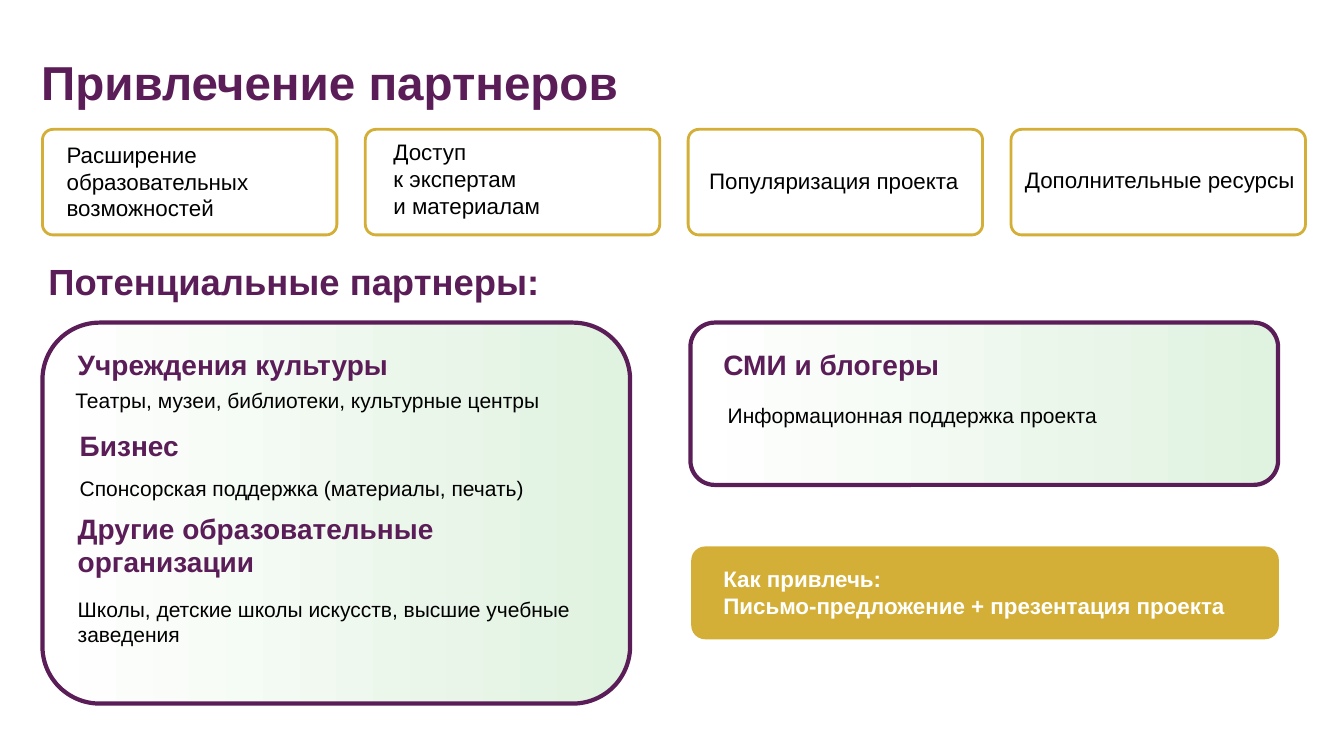
import pptx
import pptx.dml.color
import pptx.enum.shapes
import pptx.enum.text
import pptx.util

Cm = pptx.util.Cm
PLUM = pptx.dml.color.RGBColor(0x5B, 0x1D, 0x57)
GOLD = pptx.dml.color.RGBColor(0xD4, 0xAF, 0x37)
MINT = pptx.dml.color.RGBColor(0xE0, 0xF2, 0xE0)
WHITE = pptx.dml.color.RGBColor(0xFF, 0xFF, 0xFF)
BLACK = pptx.dml.color.RGBColor(0x00, 0x00, 0x00)

TOP = pptx.enum.text.MSO_ANCHOR.TOP
MIDDLE = pptx.enum.text.MSO_ANCHOR.MIDDLE

# Text styles: font values, colour, vertical anchor
TITLE = ({"size": pptx.util.Pt(34), "bold": True}, PLUM, TOP)
SECTION = ({"size": pptx.util.Pt(26), "bold": True}, PLUM, TOP)
HEAD = ({"size": pptx.util.Pt(20), "bold": True}, PLUM, MIDDLE)
BODY = ({"size": pptx.util.Pt(15), "bold": False}, BLACK, TOP)
CARD = ({"size": pptx.util.Pt(16), "bold": False}, BLACK, MIDDLE)
CALL = ({"size": pptx.util.Pt(16), "bold": True}, WHITE, MIDDLE)

# Each text: lines, style, box (left, top, width, height in cm) within its region
CARDS = [
    (["Расширение образовательных возможностей"], CARD, (0.36, 0.15, 7.06, 2.31)),
    (["Доступ ", "к экспертам ", "и материалам"], CARD, (0.46, 0.08, 4.78, 2.31)),
    (["Популяризация проекта"], CARD, (0.28, 0.81, 6.85, 0.94)),
    (["Дополнительные ресурсы"], CARD, (0.1, 0.79, 7.42, 0.94)),
]
GROUPS = [
    (["Учреждения культуры"], HEAD, (0.64, 0.48, 11.28, 1.12)),
    (["Театры, музеи, библиотеки, культурные центры"], BODY, (0.58, 1.52, 13.41, 0.89)),
    (["Бизнес"], HEAD, (0.69, 2.54, 11.28, 1.12)),
    (["Спонсорская поддержка (материалы, печать)"], BODY, (0.69, 3.73, 13.41, 0.89)),
    (["Другие образовательные организации"], HEAD, (0.64, 4.62, 11.99, 1.96)),
    (["Школы, детские школы искусств, высшие учебные заведения"], BODY,
     (0.64, 6.78, 13.41, 1.55)),
]
MEDIA = [
    (["СМИ и блогеры"], HEAD, (0.58, 0.48, 11.28, 1.12)),
    (["Информационная поддержка проекта"], BODY, (0.69, 1.88, 13.41, 0.89)),
]
OFFER = (["Как привлечь: ", "Письмо-предложение + презентация проекта"], CALL,
         (0.56, 0.33, 13.51, 1.63))


def label(slide, lines, style, box):
    """Place one text, its lines parted by line breaks."""
    values, color, anchor = style
    frame = slide.shapes.add_textbox(*map(Cm, box)).text_frame
    layout = {"word_wrap": True, "vertical_anchor": anchor,
              "auto_size": pptx.enum.text.MSO_AUTO_SIZE.SHAPE_TO_FIT_TEXT}
    for name, value in layout.items():
        setattr(frame, name, value)
    para = frame.paragraphs[0]
    for index, line in enumerate(lines):
        if index:
            para.add_line_break()
        run = para.add_run()
        run.text = line
        for name, value in {"name": "Arial", **values}.items():
            setattr(run.font, name, value)
        run.font.color.rgb = color


def inside(slide, item, box):
    """Place a text relative to the corner of its region."""
    lines, style, (left, top, width, height) = item
    label(slide, lines, style, (box[0] + left, box[1] + top, width, height))


def frame(slide, box, round, fill, edge=None, weight=0):
    """Draw a rounded box; a pair of colours as fill makes a gradient."""
    shape = slide.shapes.add_shape(
        pptx.enum.shapes.MSO_SHAPE.ROUNDED_RECTANGLE, *map(Cm, box))
    shape.adjustments[0] = round
    shape.shadow.inherit = False
    if isinstance(fill, list):
        shape.fill.gradient()
        shape.fill.gradient_angle = 0
        for place, (stop, color) in enumerate(zip(shape.fill.gradient_stops, fill)):
            stop.position = place
            stop.color.rgb = color
    else:
        shape.fill.solid()
        shape.fill.fore_color.rgb = fill
    if edge is None:
        shape.line.fill.background()
    else:
        shape.line.color.rgb = edge
        shape.line.width = pptx.util.Pt(weight)


def cards(slide, box):
    """Draw the row of benefit cards, evenly spread over the box."""
    left, top, width, height = box
    size = 7.42
    pitch = (width - size) / (len(CARDS) - 1)
    for index, item in enumerate(CARDS):
        card = (left + index * pitch, top, size, height)
        frame(slide, card, 0.1, WHITE, GOLD, 2)
        inside(slide, item, card)


def panel(slide, items, box):
    frame(slide, box, 0.15, [WHITE, MINT], PLUM, 3)
    for item in items:
        inside(slide, item, box)


def banner(slide, box):
    frame(slide, box, 0.15, GOLD)
    inside(slide, OFFER, box)


def main():
    deck = pptx.Presentation()
    deck.slide_width, deck.slide_height = Cm(33.87), Cm(19.05)
    slide = deck.slides.add_slide(deck.slide_layouts[6])
    label(slide, ["Привлечение партнеров"], TITLE, (0.79, 1.22, 29.64, 1.7))
    cards(slide, (1.07, 3.26, 31.83, 2.66))
    label(slide, ["Потенциальные партнеры:"], SECTION, (0.97, 6.4, 14.12, 1.37))
    panel(slide, GROUPS, (1.07, 8.13, 14.81, 9.6))
    panel(slide, MEDIA, (17.4, 8.13, 14.81, 4.09))
    banner(slide, (17.42, 13.77, 14.81, 2.34))
    deck.save("out.pptx")


if __name__ == "__main__":
    main()
